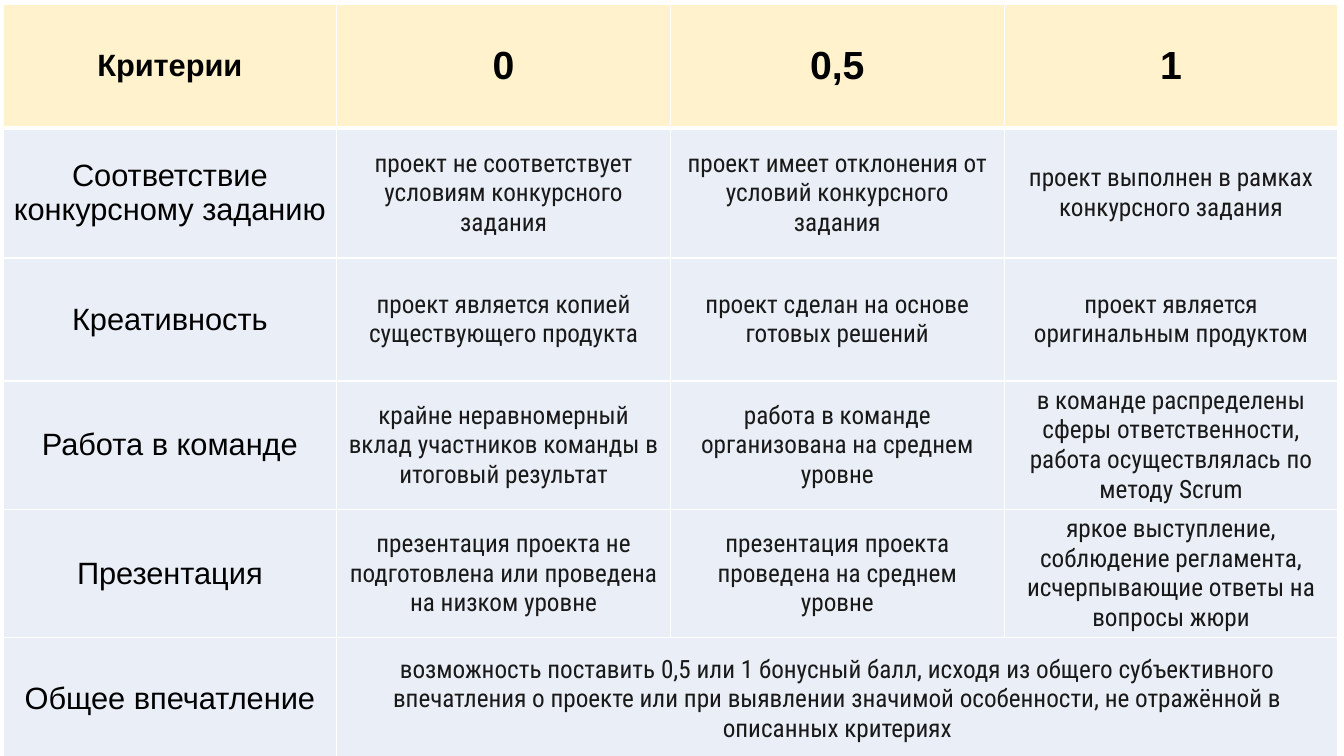
from lxml.etree import SubElement
from pptx import Presentation
from pptx.dml.color import RGBColor
from pptx.enum.text import MSO_ANCHOR, PP_ALIGN
from pptx.oxml.ns import qn
from pptx.util import Inches, Pt

WHITE = RGBColor(0xFF, 0xFF, 0xFF)
BLACK = RGBColor(0x00, 0x00, 0x00)
INK = RGBColor(0x19, 0x19, 0x19)
CREAM = RGBColor(0xFF, 0xF2, 0xCC)
PALE = RGBColor(0xEA, 0xEF, 0xF7)

LEFT, TOP = 0.03, 0.04
COLS = [3.31] * 4
ROWS = [1.23, 1.29] + [1.22] * 4

HEAD = ["Критерии", "0", "0,5", "1"]
BODY = [
    ["Соответствие конкурсному заданию",
     "проект не соответствует условиям конкурсного задания",
     "проект имеет отклонения от условий конкурсного задания",
     "проект выполнен в рамках конкурсного задания"],
    ["Креативность",
     "проект является копией существующего продукта",
     "проект сделан на основе готовых решений",
     "проект является оригинальным продуктом"],
    ["Работа в команде",
     "крайне неравномерный вклад участников команды в итоговый результат",
     "работа в команде организована на среднем уровне",
     "в команде распределены сферы ответственности, "
     "работа осуществлялась по методу Scrum"],
    ["Презентация",
     "презентация проекта не подготовлена или проведена на низком уровне",
     "презентация проекта проведена на среднем уровне",
     "яркое выступление, соблюдение регламента, "
     "исчерпывающие ответы на вопросы жюри"],
    ["Общее впечатление",
     "возможность поставить 0,5 или 1 бонусный балл, исходя из общего "
     "субъективного впечатления о проекте или при выявлении значимой "
     "особенности, не отражённой в описанных критериях"],
]


class Board:
    """Holds the slide and the look of its table."""

    def __init__(self, slide):
        self.slide = slide
        self.label = ("Arial", 22, BLACK)
        self.score = ("Arial", 28, BLACK)
        self.note = ("Roboto Condensed", 18, INK)

    def grid(self, head, body):
        """Add the table; a short row has its last cell merged to the right edge."""
        frame = self.slide.shapes.add_table(
            len(ROWS), len(COLS), Inches(LEFT), Inches(TOP),
            Inches(sum(COLS)), Inches(sum(ROWS)))
        table = frame.table
        for col, width in zip(table.columns, COLS):
            col.width = Inches(width)
        for row, height in zip(table.rows, ROWS):
            row.height = Inches(height)
        for r, texts in enumerate([head] + body):
            for c in range(len(COLS)):
                self.paint(table.cell(r, c), r == 0)
            for c, text in enumerate(texts):
                rest = self.score if r == 0 else self.note
                self.label_cell(table.cell(r, c), text, rest if c else self.label, r == 0)
            if len(texts) < len(COLS):
                last = table.cell(r, len(COLS) - 1)
                table.cell(r, len(texts) - 1).merge(last)

    def paint(self, cell, top):
        """Draw the four borders, then the fill, in the order the schema asks."""
        props = cell._tc.get_or_add_tcPr()
        for side in "LRTB":
            width = Pt(3 if top and side == "B" else 1)
            line = SubElement(props, qn(f"a:ln{side}"), w=str(width))
            fill = SubElement(line, qn("a:solidFill"))
            SubElement(fill, qn("a:srgbClr"), val=str(WHITE))
        cell.fill.solid()
        cell.fill.fore_color.rgb = CREAM if top else PALE

    def label_cell(self, cell, text, style, bold):
        cell.vertical_anchor = MSO_ANCHOR.MIDDLE
        cell.text_frame.text = text
        para = cell.text_frame.paragraphs[0]
        para.alignment = PP_ALIGN.CENTER
        font = para.runs[0].font
        font.name, size, font.color.rgb = style
        font.size = Pt(size)
        font.bold = bold


def main():
    deck = Presentation()
    deck.slide_width, deck.slide_height = Inches(13.33), Inches(7.5)
    blank = deck.slide_layouts[6]
    Board(deck.slides.add_slide(blank)).grid(HEAD, BODY)
    deck.save("out.pptx")


if __name__ == "__main__":
    main()
